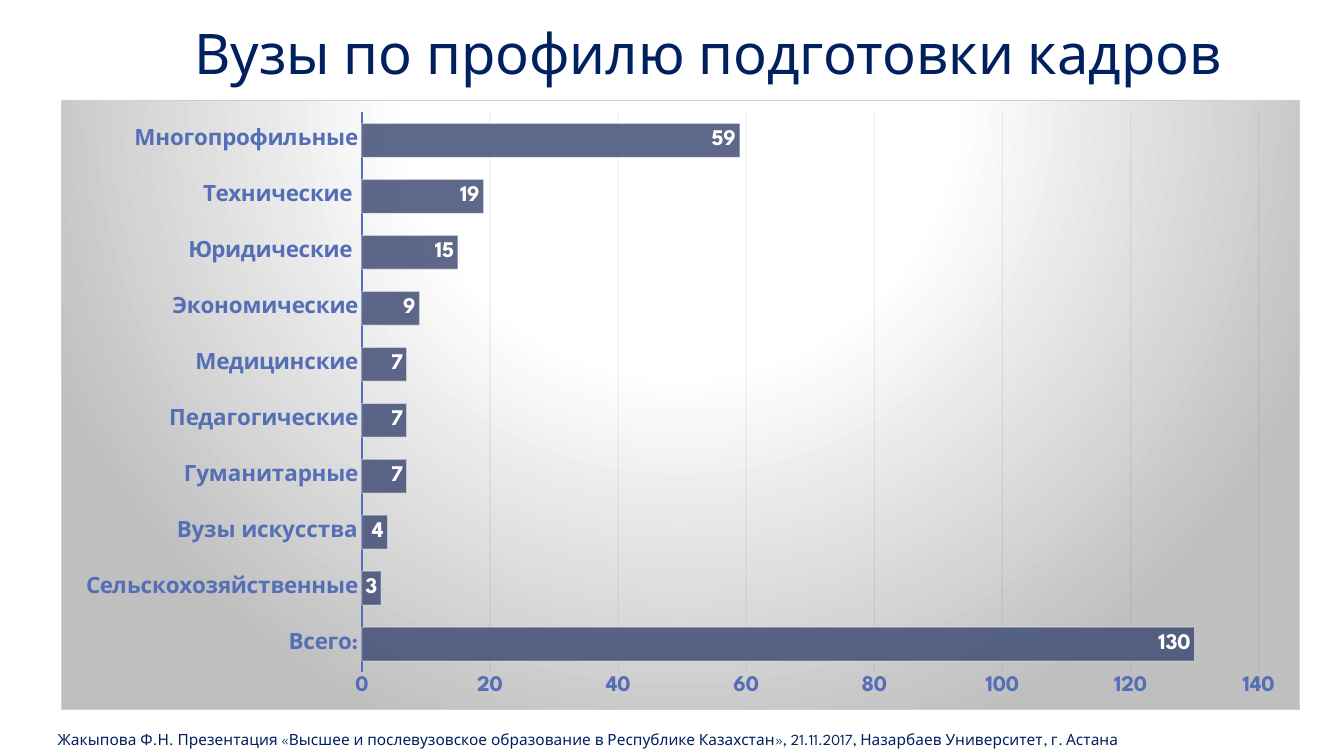
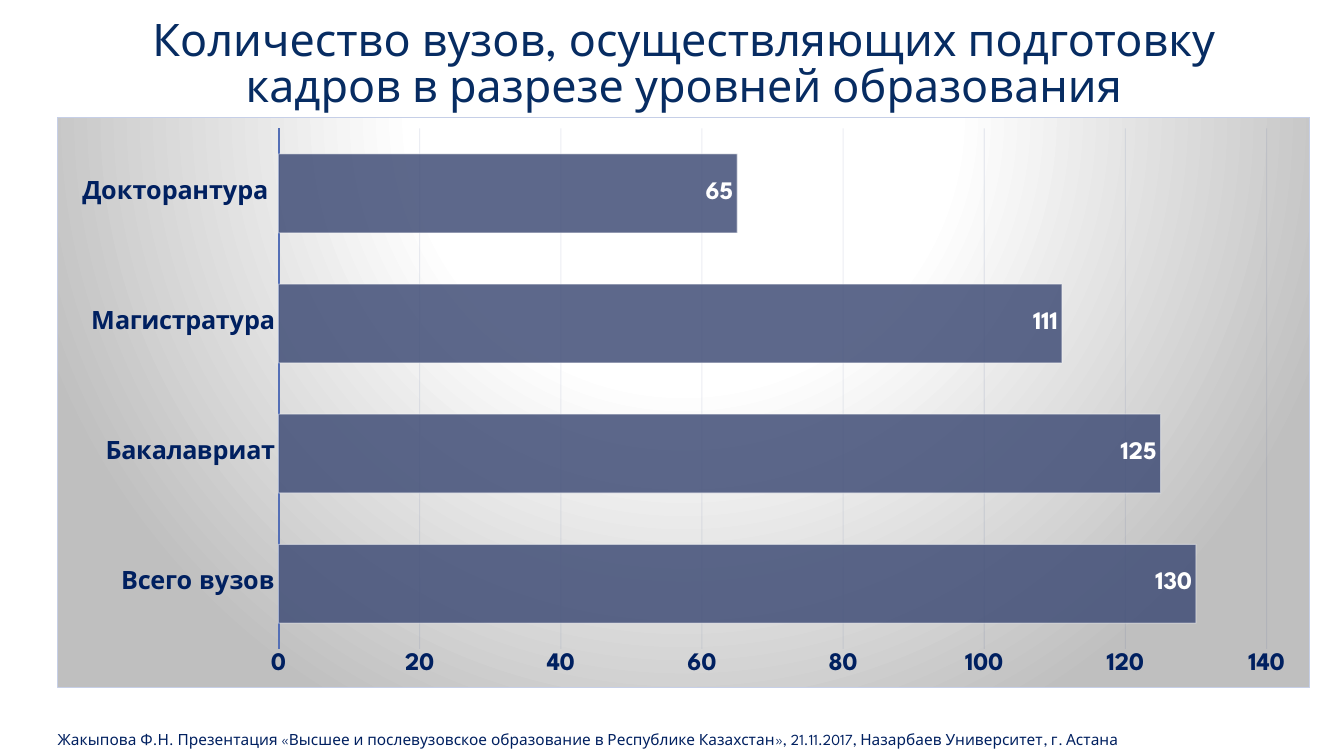
import lxml.etree
import pptx
import pptx.chart.data
import pptx.dml.color
import pptx.enum.chart
import pptx.enum.text
import pptx.oxml
import pptx.oxml.ns
import pptx.util

EMU_PER_PX = 9525
FONT = "League Spartan"
COLORS = {
    "navy": "002060",
    "title": "072C62",
    "axis": "546FB6",
    "grid": "3C538C",
    "bar": "414E77",
    "text": "374C81",
    "border": "C6CFE7",
    "white": "FFFFFF",
    "gray": "BFBFBF",
}
SOURCE = (
    "Жакыпова Ф.Н. Презентация «Высшее и послевузовское образование "
    "в Республике Казахстан», 21.11.2017, Назарбаев Университет, г. Астана"
)
CHART_BACKGROUND = f"""
<c:spPr {pptx.oxml.ns.nsdecls("c", "a")}>
  <a:gradFill rotWithShape="1">
    <a:gsLst>
      <a:gs pos="0"><a:srgbClr val="{COLORS["white"]}"/></a:gs>
      <a:gs pos="39000"><a:srgbClr val="{COLORS["white"]}"/></a:gs>
      <a:gs pos="100000"><a:srgbClr val="{COLORS["gray"]}"/></a:gs>
    </a:gsLst>
    <a:path path="circle">
      <a:fillToRect l="50000" t="-80000" r="50000" b="180000"/>
    </a:path>
  </a:gradFill>
  <a:ln w="9525">
    <a:solidFill><a:srgbClr val="{COLORS["border"]}"/></a:solidFill>
  </a:ln>
</c:spPr>"""


def px(length):
    return pptx.util.Emu(length * EMU_PER_PX)


def rgb(color):
    return pptx.dml.color.RGBColor.from_string(COLORS[color])


def set_opacity(element, *percents):
    """Give the colours inside element, in order, these opacities."""
    colors = element.iter(pptx.oxml.ns.qn("a:srgbClr"))
    for color, percent in zip(colors, percents):
        alpha = lxml.etree.SubElement(color, pptx.oxml.ns.qn("a:alpha"))
        alpha.set("val", str(percent * 1000))


def style_font(font, size, color, bold=False):
    font.name = FONT
    font.size = pptx.util.Pt(size)
    font.bold = bold
    font.color.rgb = rgb(color)


def style_line(line, color, width=0.75):
    line.color.rgb = rgb(color)
    line.width = pptx.util.Pt(width)


class Deck:
    """The presentation, its style and the slide being built."""

    def __init__(self):
        self.presentation = pptx.Presentation()
        self.presentation.slide_width = px(1280)
        self.presentation.slide_height = px(720)
        self.slide = None

    def add_slide(self):
        self.slide = self.presentation.slides.add_slide(
            self.presentation.slide_layouts[6])
        self.text(SOURCE, (42, 685, 1149, 34), 11, "navy")

    def text(self, text, box, size, color):
        frame = self.slide.shapes.add_textbox(*map(px, box)).text_frame
        frame.word_wrap = True
        frame.vertical_anchor = pptx.enum.text.MSO_ANCHOR.BOTTOM
        frame.margin_left = frame.margin_right = px(13)
        frame.margin_top = frame.margin_bottom = px(6)
        paragraph = frame.paragraphs[0]
        run = paragraph.add_run()
        run.text = text
        style_font(run.font, size, color)
        return paragraph

    def title(self, text, box, size, color):
        paragraph = self.text(text, box, size, color)
        paragraph.alignment = pptx.enum.text.PP_ALIGN.CENTER
        paragraph.line_spacing = 0.85

    def bar_chart(self, counts, box, size, axis_color):
        """Draw counts, a dict listed from the bottom bar up."""
        data = pptx.chart.data.CategoryChartData()
        data.categories = list(counts)
        data.add_series("Series 1", list(counts.values()))
        chart = self.slide.shapes.add_chart(
            pptx.enum.chart.XL_CHART_TYPE.BAR_CLUSTERED,
            *map(px, box), data).chart
        chart.has_title = False
        chart.has_legend = False
        style_font(chart.font, size, "text")
        chart_element = chart._chartSpace.find(pptx.oxml.ns.qn("c:chart"))
        chart_element.addnext(pptx.oxml.parse_xml(CHART_BACKGROUND))
        self.axes(chart, size, axis_color)
        self.bars(chart.plots[0], size)

    def axes(self, chart, size, color):
        for axis in (chart.category_axis, chart.value_axis):
            axis.major_tick_mark = pptx.enum.chart.XL_TICK_MARK.NONE
            axis.minor_tick_mark = pptx.enum.chart.XL_TICK_MARK.NONE
            style_font(axis.tick_labels.font, size, color, bold=True)
        style_line(chart.category_axis.format.line, "axis", 1.5)
        values = chart.value_axis
        values.format.line.fill.background()
        values.minimum_scale = 0
        values.maximum_scale = 140
        values.major_unit = 20
        style_line(values.major_gridlines.format.line, "grid")
        gridlines = values._element.find(pptx.oxml.ns.qn("c:majorGridlines"))
        set_opacity(gridlines, 10)

    def bars(self, plot, size):
        plot.gap_width = 65
        plot.vary_by_categories = False
        series = plot.series[0]
        series.format.fill.solid()
        series.format.fill.fore_color.rgb = rgb("bar")
        style_line(series.format.line, "white")
        set_opacity(series._element.find(pptx.oxml.ns.qn("c:spPr")), 85, 50)
        plot.has_data_labels = True
        labels = plot.data_labels
        labels.show_value = True
        labels.position = pptx.enum.chart.XL_LABEL_POSITION.INSIDE_END
        style_font(labels.font, size, "white", bold=True)


def main():
    deck = Deck()

    deck.add_slide()
    deck.title("Вузы по профилю подготовки кадров",
               (118, 20, 1113, 68), 40, "navy")
    profiles = {
        "Всего:": 130,
        "Сельскохозяйственные": 3,
        "Вузы искусства": 4,
        "Гуманитарные": 7,
        "Педагогические": 7,
        "Медицинские": 7,
        "Экономические": 9,
        "Юридические ": 15,
        "Технические ": 19,
        "Многопрофильные": 59,
    }
    deck.bar_chart(profiles, (58, 95, 1180, 581), 16, "axis")

    deck.add_slide()
    deck.title("Количество вузов, осуществляющих подготовку кадров "
               "в разрезе уровней образования",
               (118, 12, 1067, 100), 32, "title")
    levels = {
        "Всего вузов": 130,
        "Бакалавриат": 125,
        "Магистратура": 111,
        "Докторантура ": 65,
    }
    deck.bar_chart(levels, (54, 111, 1194, 544), 18, "navy")

    deck.presentation.save("out.pptx")


if __name__ == "__main__":
    main()
